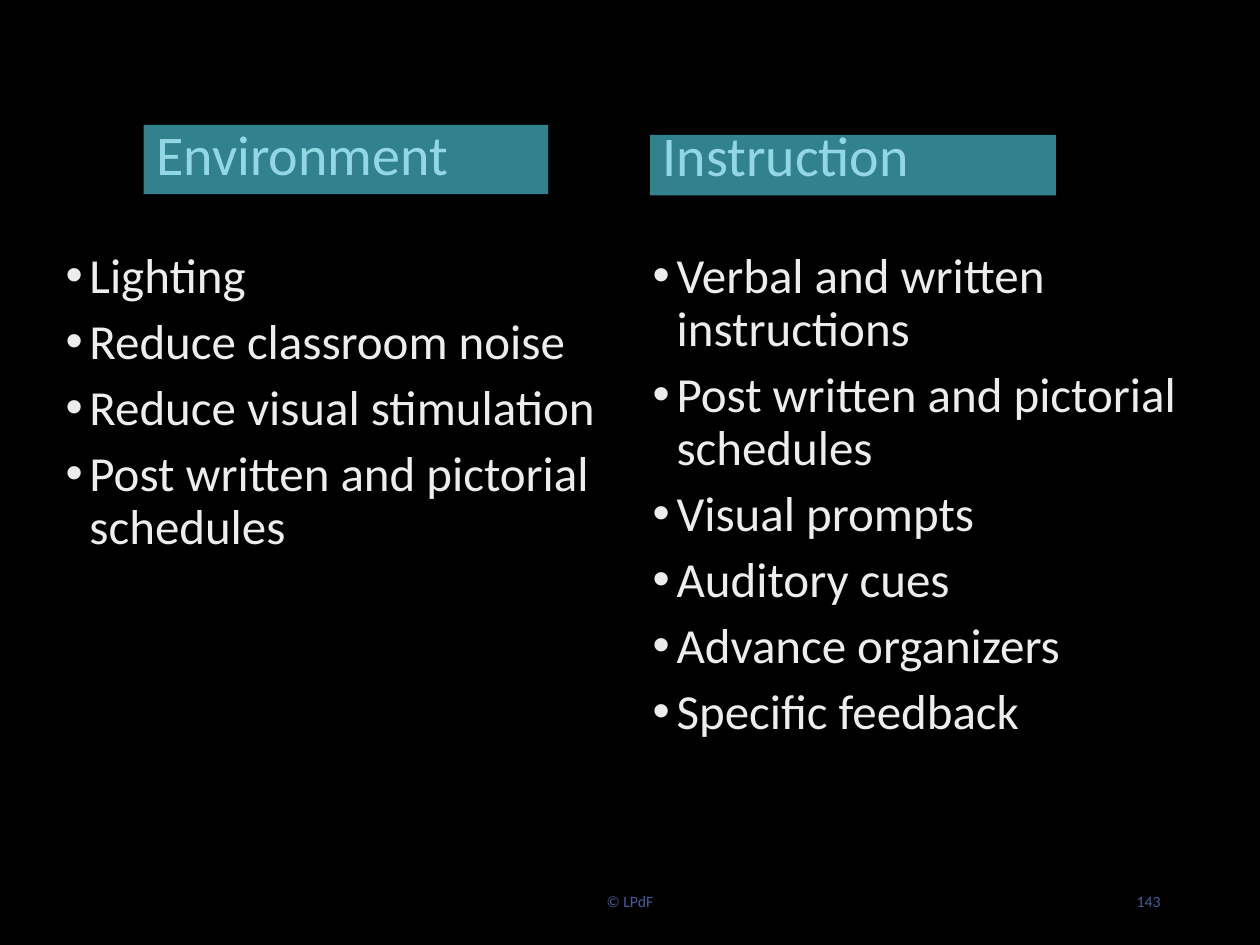
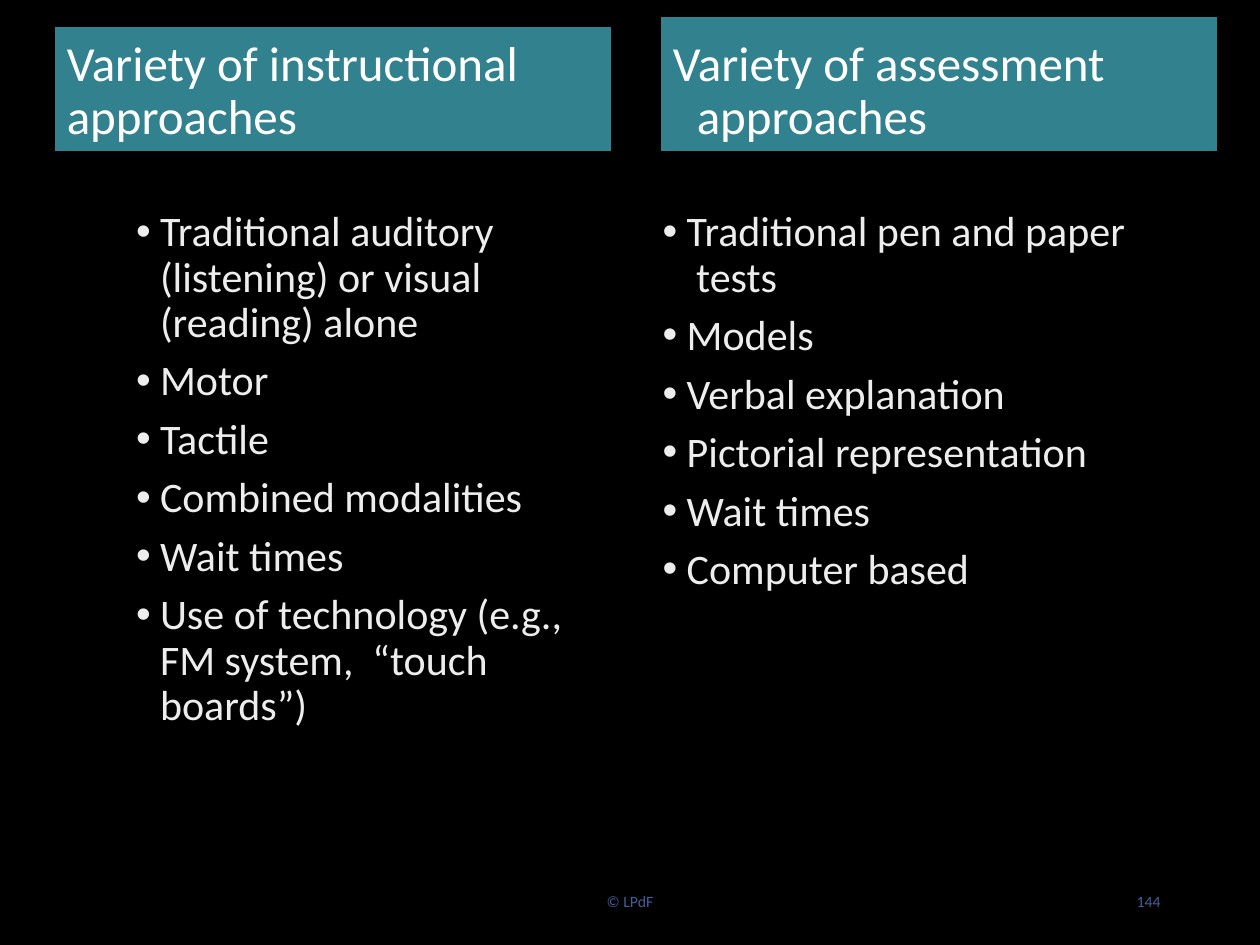
from dataclasses import dataclass

from lxml.etree import SubElement
from pptx import Presentation
from pptx.dml.color import RGBColor
from pptx.enum.text import MSO_ANCHOR, MSO_AUTO_SIZE, PP_ALIGN
from pptx.oxml.ns import qn
from pptx.util import Inches, Pt

# Shared look
COLORS = {
    "background": "000000",
    "band": "31828E",
    "pale_heading": "94D7E4",
    "white_heading": "FFFFFF",
    "list": "EDEDED",
    "footer": "465E9C",
}
FONT = "Calibri"
HANGING = 0.19
COMPARISON_LAYOUT = 4
CREDIT = "© LPdF"
FIRST_NUMBER = 143


@dataclass
class Box:
    left: float
    top: float
    width: float
    height: float


@dataclass
class Column:
    heading: str
    heading_box: Box
    items: list[str]
    list_box: Box
    heading_hanging: float = 0


@dataclass
class Comparison:
    columns: list[Column]
    heading_size: float
    heading_color: str
    list_size: float
    outlined: bool = False


CREDIT_BOX = Box(3.31, 6.95, 3.38, 0.4)
NUMBER_BOX = Box(7.06, 6.95, 2.25, 0.4)

# Content
COMPARISONS = [
    Comparison(
        [
            Column(
                "Environment", Box(1.14, 0.99, 3.21, 0.55),
                ["Lighting", "Reduce classroom noise", "Reduce visual stimulation",
                 "Post written and pictorial schedules"],
                Box(0.42, 1.94, 4.42, 4.03),
            ),
            Column(
                "Instruction", Box(5.16, 1.07, 3.22, 0.48),
                ["Verbal and written instructions",
                 "Post written and pictorial schedules",
                 "Visual prompts", "Auditory cues", "Advance organizers",
                 "Specific feedback"],
                Box(5.08, 1.94, 4.42, 4.03), HANGING,
            ),
        ],
        heading_size=32, heading_color="pale_heading", list_size=28,
    ),
    Comparison(
        [
            Column(
                "Variety of instructional approaches", Box(0.43, 0.21, 4.42, 0.99),
                ["Traditional auditory (listening) or visual (reading) alone",
                 "Motor", "Tactile", "Combined modalities", "Wait times",
                 "Use of technology (e.g., FM system,  “touch boards”)"],
                Box(0.98, 1.62, 3.94, 4.72),
            ),
            Column(
                "Variety of assessment approaches", Box(5.24, 0.13, 4.42, 1.07),
                ["Traditional pen and paper  tests", "Models",
                 "Verbal explanation", "Pictorial representation",
                 "Wait times", "Computer based"],
                Box(5.16, 1.62, 3.94, 3.95), HANGING,
            ),
        ],
        heading_size=28, heading_color="white_heading", list_size=24, outlined=True,
    ),
]


def rgb(name: str) -> RGBColor:
    return RGBColor.from_string(COLORS[name])


def inches(box: Box) -> tuple:
    return Inches(box.left), Inches(box.top), Inches(box.width), Inches(box.height)


def place(shape, box: Box) -> None:
    shape.left, shape.top, shape.width, shape.height = inches(box)


def write(shape, lines: list[str], *, size: float, color: str,
          anchor=MSO_ANCHOR.TOP, align=PP_ALIGN.LEFT, hanging: float = 0,
          bullet: str = "", line_spacing: float = 0.9, gap: float = 7.5) -> None:
    """Fill a shape with one formatted paragraph per line."""
    frame = shape.text_frame
    frame.word_wrap = True
    frame.auto_size = MSO_AUTO_SIZE.NONE
    frame.vertical_anchor = anchor
    for index, line in enumerate(lines):
        paragraph = frame.paragraphs[0] if index == 0 else frame.add_paragraph()
        properties = paragraph._p.get_or_add_pPr()
        properties.set("marL", str(Inches(hanging)))
        properties.set("indent", str(-Inches(hanging)))
        if bullet:
            SubElement(properties, qn("a:buFont")).set("typeface", "Arial")
            SubElement(properties, qn("a:buChar")).set("char", bullet)
        else:
            SubElement(properties, qn("a:buNone"))
        paragraph.alignment = align
        paragraph.line_spacing = line_spacing
        paragraph.space_before = Pt(gap if index else 0)
        run = paragraph.add_run()
        run.text = line
        run.font.name = FONT
        run.font.size = Pt(size)
        run.font.bold = False
        run.font.color.rgb = rgb(color)


def add_column(heading, points, column: Column, style: Comparison) -> None:
    # Heading band
    place(heading, column.heading_box)
    heading.fill.solid()
    heading.fill.fore_color.rgb = rgb("band")
    if style.outlined:
        heading.line.color.rgb = rgb("background")
        heading.line.width = Pt(0.5)
    write(heading, [column.heading], size=style.heading_size,
          color=style.heading_color, anchor=MSO_ANCHOR.BOTTOM,
          hanging=column.heading_hanging)
    # Bulleted list
    place(points, column.list_box)
    write(points, column.items, size=style.list_size, color="list",
          hanging=HANGING, bullet="•")


def add_footer(slide, number: int) -> None:
    for text, box, align in (
        (CREDIT, CREDIT_BOX, PP_ALIGN.CENTER),
        (str(number), NUMBER_BOX, PP_ALIGN.RIGHT),
    ):
        write(slide.shapes.add_textbox(*inches(box)), [text], size=9,
              color="footer", anchor=MSO_ANCHOR.MIDDLE, align=align, line_spacing=1.0)


def add_comparison(deck, comparison: Comparison, number: int) -> None:
    slide = deck.slides.add_slide(deck.slide_layouts[COMPARISON_LAYOUT])
    title, *bodies = slide.placeholders
    title._element.getparent().remove(title._element)
    for heading, points, column in zip(bodies[::2], bodies[1::2], comparison.columns):
        add_column(heading, points, column, comparison)
    add_footer(slide, number)


def main() -> None:
    deck = Presentation()
    deck.slide_width, deck.slide_height = Inches(10), Inches(7.5)
    background = deck.slide_master.background.fill
    background.solid()
    background.fore_color.rgb = rgb("background")
    for number, comparison in enumerate(COMPARISONS, FIRST_NUMBER):
        add_comparison(deck, comparison, number)
    deck.save("out.pptx")


if __name__ == "__main__":
    main()
